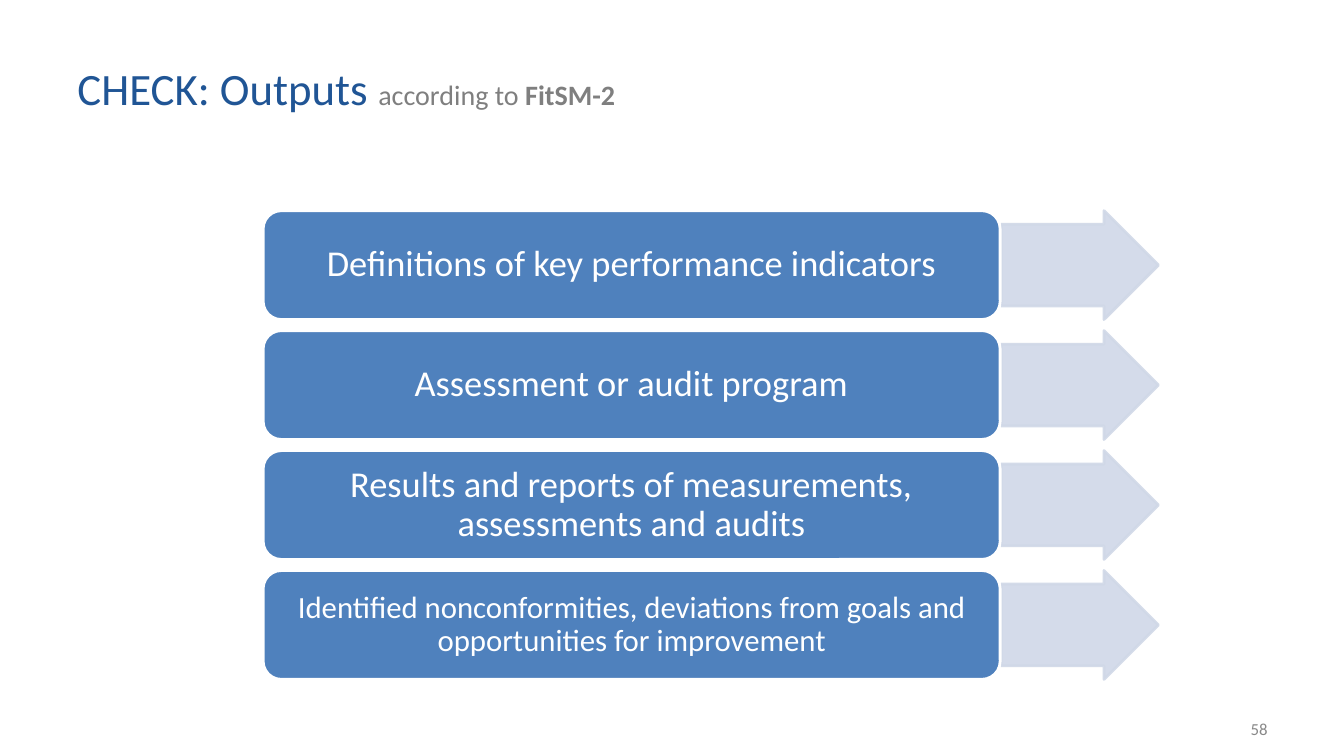
from dataclasses import dataclass

from lxml.etree import SubElement
from pptx import Presentation
from pptx.dml.color import RGBColor
from pptx.enum.shapes import MSO_SHAPE as SHAPE
from pptx.enum.text import MSO_ANCHOR as ANCHOR, PP_ALIGN as ALIGN
from pptx.oxml.ns import qn
from pptx.util import Inches, Pt

BOX_LEFT, BOX_WIDTH = 2.61, 7.31
ARROW_LEFT, ARROW_WIDTH = 9.93, 1.56
ROW_TOP, ROW_HEIGHT, ROW_STEP = 2.09, 1.08, 1.19


@dataclass
class Run:
    text: str
    size: float
    color: str
    bold: bool = False


@dataclass
class Output:
    text: str
    size: float = 26


TITLE = [
    Run("CHECK: Outputs ", 32, "205595"),
    Run("according to ", 20, "7F7F7F"),
    Run("FitSM-2", 20, "7F7F7F", True),
]
OUTPUTS = [
    Output("Definitions of key performance indicators"),
    Output("Assessment or audit program"),
    Output("Results and reports of measurements, assessments and audits"),
    Output("Identified nonconformities, deviations from goals and "
           "opportunities for improvement", 22),
]


def rgb(color: str) -> RGBColor:
    return RGBColor.from_string(color)


def write(sp, runs: list[Run], align: ALIGN, **paragraph_format) -> None:
    tf = sp.text_frame
    tf.word_wrap = True
    tf.vertical_anchor = ANCHOR.MIDDLE
    p = tf.paragraphs[0]
    for name, value in {"alignment": align, **paragraph_format}.items():
        setattr(p, name, value)
    for run in runs:
        r = p.add_run()
        r.text = run.text
        font = {"name": "Calibri", "size": Pt(run.size), "bold": run.bold}
        for name, value in font.items():
            setattr(r.font, name, value)
        r.font.color.rgb = rgb(run.color)


def add_text(slide, left: float, top: float, width: float, height: float,
             runs: list[Run], align: ALIGN) -> None:
    sp = slide.shapes.add_textbox(*map(Inches, (left, top, width, height)))
    write(sp, runs, align)


def add_shape(slide, kind: SHAPE, left: float, top: float, width: float,
              adjustments: list[float], fill: str, line: str):
    sp = slide.shapes.add_shape(
        kind, *map(Inches, (left, top, width, ROW_HEIGHT)))
    for i, value in enumerate(adjustments):
        sp.adjustments[i] = value
    sp.shadow.inherit = False
    sp.fill.solid()
    sp.fill.fore_color.rgb = rgb(fill)
    sp.line.color.rgb = rgb(line)
    sp.line.width = Pt(2)
    return sp


def add_output(slide, output: Output, top: float) -> None:
    # Arrow, with slightly transparent fill and outline
    arrow = add_shape(slide, SHAPE.RIGHT_ARROW, ARROW_LEFT, top, ARROW_WIDTH,
                      [0.75, 0.5], "D0D8E8", "D0D8E7")
    for color in arrow.element.spPr.iter(qn("a:srgbClr")):
        SubElement(color, qn("a:alpha"), val="90000")

    # Labelled box
    box = add_shape(slide, SHAPE.ROUNDED_RECTANGLE, BOX_LEFT, top, BOX_WIDTH,
                    [0.167], "4F81BD", "FFFFFF")
    margins = {"margin_left": 0.12, "margin_right": 0.12,
               "margin_top": 0.06, "margin_bottom": 0.06}
    for name, value in margins.items():
        setattr(box.text_frame, name, Inches(value))
    write(box, [Run(output.text, output.size, "FFFFFF")], ALIGN.CENTER,
          line_spacing=0.9, space_after=Pt(9.8))


def main() -> None:
    prs = Presentation()
    prs.slide_width, prs.slide_height = Inches(13.33), Inches(7.5)
    slide = prs.slides.add_slide(prs.slide_layouts[6])

    # Title and slide number
    add_text(slide, 0.67, 0.3, 9.9, 1.14, TITLE, ALIGN.LEFT)
    add_text(slide, 9.56, 7.03, 3.11, 0.4, [Run("58", 12, "888888")],
             ALIGN.RIGHT)

    # Output rows
    for i, output in enumerate(OUTPUTS):
        add_output(slide, output, ROW_TOP + i * ROW_STEP)

    prs.save("out.pptx")


if __name__ == "__main__":
    main()
